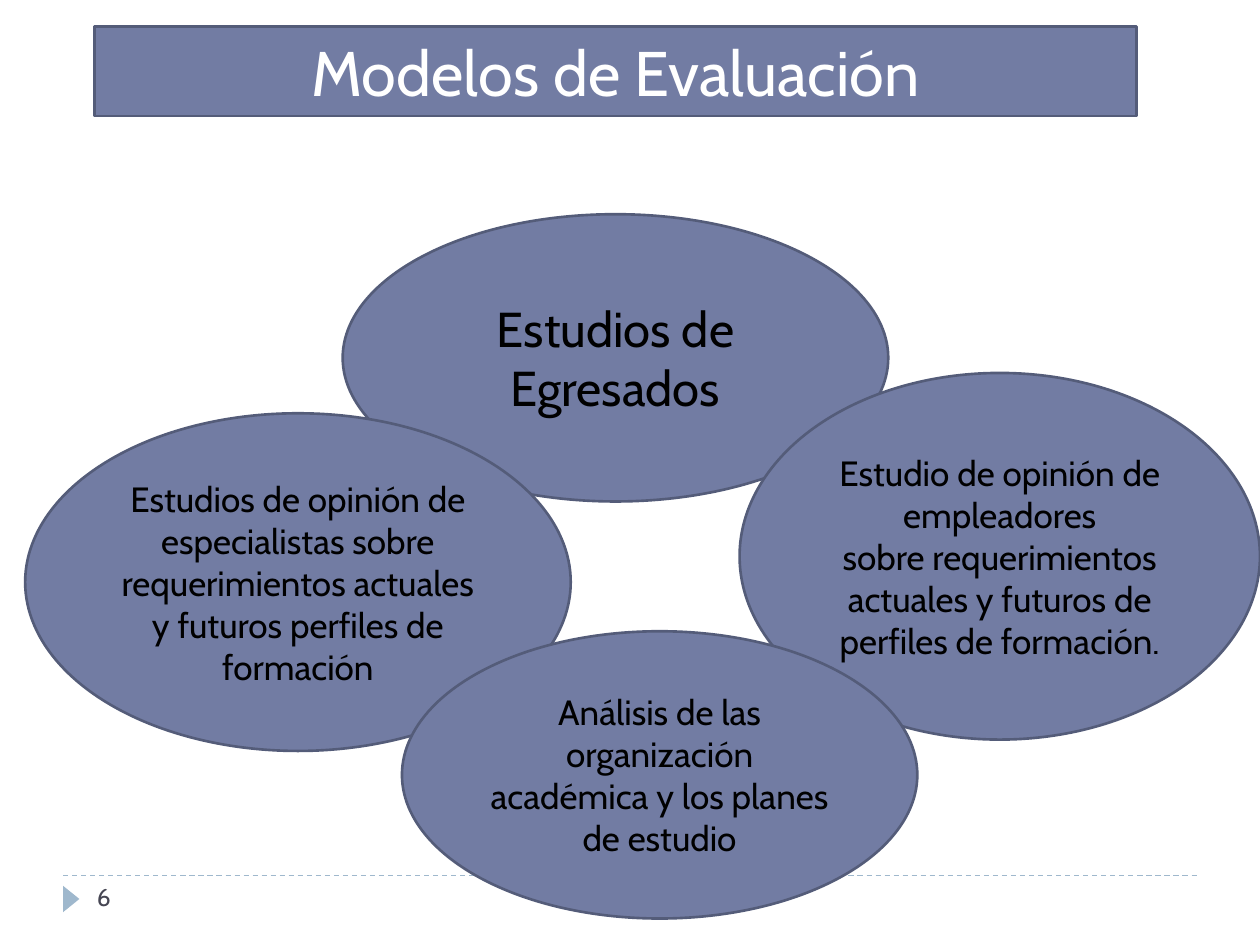
from dataclasses import dataclass

from lxml.etree import SubElement
from pptx import Presentation
from pptx.dml.color import RGBColor
from pptx.enum.dml import MSO_LINE
from pptx.enum.shapes import MSO_CONNECTOR, MSO_SHAPE
from pptx.enum.text import MSO_ANCHOR, PP_ALIGN
from pptx.oxml.ns import qn
from pptx.util import Inches, Pt

FONT = "Cabin"
FILL, OUTLINE, ACCENT = "727CA3", "545C79", "9FB8CD"
WHITE, BLACK, GREY = "FFFFFF", "000000", "464653"

# Grid of 10 columns by 7.5 rows over the whole slide
WIDTH, HEIGHT = Inches(10), Inches(7.5)
COL, ROW = WIDTH / 10, HEIGHT / 7.5


@dataclass
class Panel:
    kind: MSO_SHAPE
    col: float
    row: float
    cols: float
    rows: float
    text: str
    size: int = 20
    color: str = BLACK


PANELS = [
    Panel(MSO_SHAPE.RECTANGLE, 0.75, 0.21, 8.27, 0.71,
          "Modelos de Evaluación", 36, WHITE),
    Panel(MSO_SHAPE.OVAL, 2.72, 1.7, 4.33, 2.28, "Estudios de Egresados", 28),
    Panel(MSO_SHAPE.OVAL, 0.2, 3.28, 4.33, 2.68,
          "Estudios de opinión de especialistas sobre requerimientos "
          "actuales y futuros perfiles de formación"),
    Panel(MSO_SHAPE.OVAL, 5.87, 2.96, 4.13, 2.91,
          "Estudio de opinión de empleadores\n"
          "sobre requerimientos actuales y futuros de perfiles de formación."),
    Panel(MSO_SHAPE.OVAL, 3.19, 5.01, 4.09, 2.28,
          "Análisis de las organización académica y los planes de estudio"),
]


def rgb(color: str) -> RGBColor:
    return RGBColor.from_string(color)


def box(col: float, row: float, cols: float, rows: float) -> tuple:
    return int(col * COL), int(row * ROW), int(cols * COL), int(rows * ROW)


def write(tf, text: str, size: int, color: str, align: PP_ALIGN) -> None:
    tf.word_wrap = True
    tf.text = text
    for p in tf.paragraphs:
        p.alignment = align
        for r in p.runs:
            r.font.name = FONT
            r.font.size = Pt(size)
            r.font.color.rgb = rgb(color)


def add_panel(s, panel: Panel) -> None:
    sp = s.shapes.add_shape(
        panel.kind, *box(panel.col, panel.row, panel.cols, panel.rows))
    sp.shadow.inherit = False
    sp.fill.solid()
    sp.fill.fore_color.rgb = rgb(FILL)
    sp.line.color.rgb = rgb(OUTLINE)
    sp.line.width = Pt(1.5)
    sp.text_frame.vertical_anchor = MSO_ANCHOR.MIDDLE
    write(sp.text_frame, panel.text, panel.size, panel.color, PP_ALIGN.CENTER)


def add_footer_marks(s) -> None:
    # Dashed rule
    x, y, w, _ = box(0.5, 6.95, 9, 0)
    rule = s.shapes.add_connector(MSO_CONNECTOR.STRAIGHT, x, y, x + w, y)
    rule.line.color.rgb = rgb(ACCENT)
    rule.line.width = Pt(0.75)
    rule.line.dash_style = MSO_LINE.DASH
    SubElement(rule._element.spPr, qn("a:effectLst"))

    # Arrow marker
    marker = s.shapes.add_shape(
        MSO_SHAPE.ISOSCELES_TRIANGLE, *box(0.46, 7.07, 0.21, 0.13))
    marker.rotation = 90
    marker.shadow.inherit = False
    marker.fill.solid()
    marker.fill.fore_color.rgb = rgb(ACCENT)
    marker.line.fill.background()


def main() -> None:
    prs = Presentation()
    prs.slide_width, prs.slide_height = WIDTH, HEIGHT
    s = prs.slides.add_slide(prs.slide_layouts[6])

    add_footer_marks(s)

    # Title bar and overlapping ellipses, back to front
    for panel in PANELS:
        add_panel(s, panel)

    # Slide number
    number = s.shapes.add_textbox(*box(0.67, 6.95, 2.17, 0.4))
    write(number.text_frame, "6", 14, GREY, PP_ALIGN.LEFT)

    prs.save("out.pptx")


if __name__ == "__main__":
    main()
